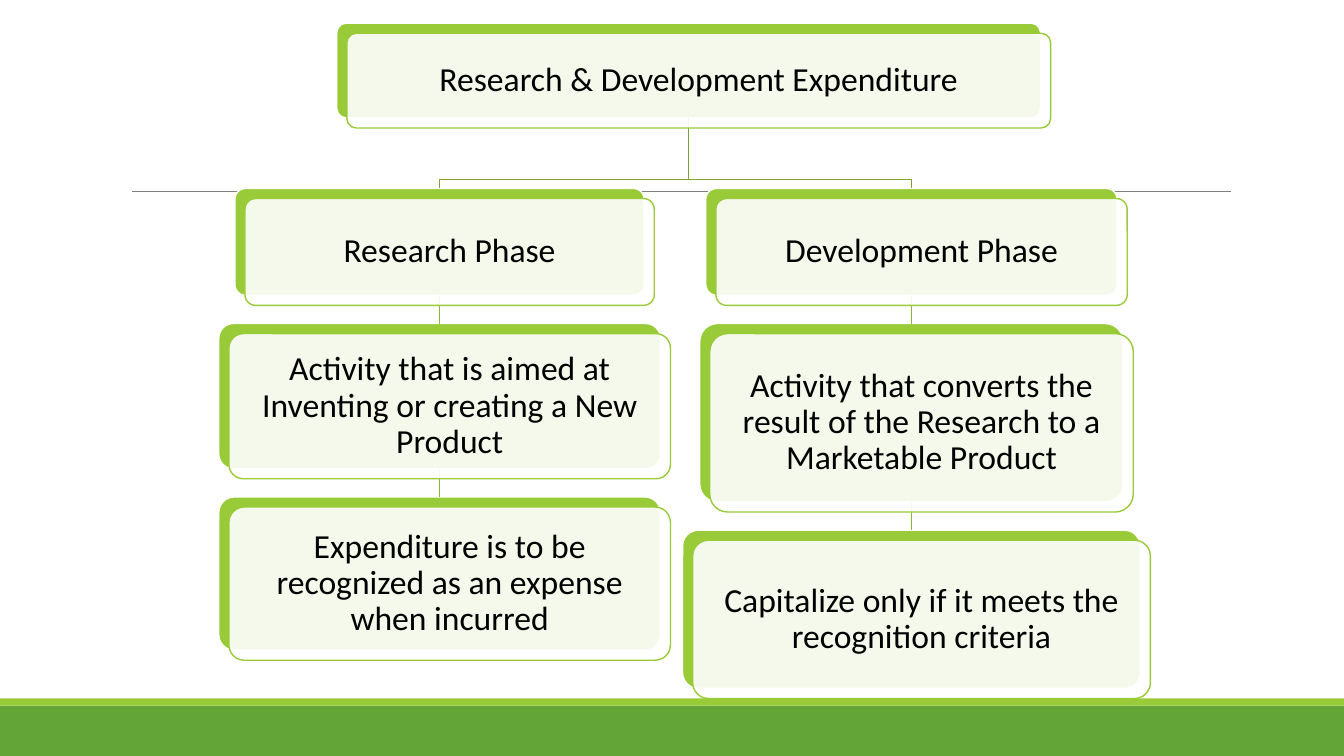
"""Build a slide charting how research and development expenditure is treated."""
import dataclasses
import typing

import lxml.etree
import pptx
import pptx.dml.color
import pptx.enum.shapes
import pptx.enum.text
import pptx.oxml.ns
import pptx.util

PX = 9144
SHAPE = pptx.enum.shapes.MSO_SHAPE
STRAIGHT = pptx.enum.shapes.MSO_CONNECTOR.STRAIGHT
PAGE_WIDTH, PAGE_HEIGHT = 1333, 750
PANEL_SHIFT = 10
PANEL_INSET = 3
BRANCH_Y = 178
TITLE_ONLY = 5


@dataclasses.dataclass(frozen=True)
class Theme:
    green: str = "63A537"
    lime: str = "99CB38"
    branch: str = "7BA32D"
    link: str = "8BB833"
    rule: str = "808080"
    paper: str = "FFFFFF"
    ink: str = "000000"
    font: str = "Calibri"
    size: int = 24
    line: float = 1
    thin: float = 0.5
    panel_alpha: int = 90


@dataclasses.dataclass(frozen=True)
class Card:
    text: str
    center: int
    top: int
    width: int
    height: int

    @property
    def left(self) -> int:
        return self.center - self.width // 2

    @property
    def bottom(self) -> int:
        return self.top + self.height


THEME = Theme()
ROOT = Card("Research & Development Expenditure", 683, 23, 698, 94)
BRANCHES = (
    (
        Card("Research Phase", 436, 187, 406, 106),
        Card("Activity that is aimed at Inventing or creating a New Product", 436, 321, 438, 144),
        Card("Expenditure is to be recognized as an expense when incurred", 436, 493, 438, 152),
    ),
    (
        Card("Development Phase", 904, 187, 408, 106),
        Card("Activity that converts the result of the Research to a Marketable Product",
             904, 321, 420, 177),
        Card("Capitalize only if it meets the recognition criteria", 904, 526, 454, 157),
    ),
)


def rgb(value: str) -> pptx.dml.color.RGBColor:
    return pptx.dml.color.RGBColor.from_string(value)


def apply(target: typing.Any, values: dict[str, typing.Any]) -> None:
    for name, value in values.items():
        setattr(target, name, value)


def set_line(item: typing.Any, color: str, width: float) -> None:
    item.line.color.rgb = rgb(color)
    item.line.width = pptx.util.Pt(width)


def add_block(page: typing.Any, kind: typing.Any, left: int, top: int, width: int,
              height: int, fill: str, line: str | None = None) -> typing.Any:
    block = page.shapes.add_shape(kind, left * PX, top * PX, width * PX, height * PX)
    block.shadow.inherit = False
    block.fill.solid()
    block.fill.fore_color.rgb = rgb(fill)
    if line:
        block.adjustments[0] = 0.1
        set_line(block, line, THEME.line)
    else:
        block.line.fill.background()
    return block


def add_line(page: typing.Any, start: tuple[int, int], end: tuple[int, int],
             color: str, width: float) -> typing.Any:
    points = [value * PX for value in (*start, *end)]
    connector = page.shapes.add_connector(STRAIGHT, *points)
    set_line(connector, color, width)
    lxml.etree.SubElement(connector._element.spPr, pptx.oxml.ns.qn("a:effectLst"))
    return connector


def add_elbow(page: typing.Any, parent: Card, child: Card) -> None:
    builder = page.shapes.build_freeform(parent.center, parent.bottom, scale=PX)
    builder.add_line_segments(
        [(parent.center, BRANCH_Y), (child.center, BRANCH_Y), (child.center, child.top)],
        close=False)
    elbow = builder.convert_to_shape()
    elbow.shadow.inherit = False
    elbow.fill.background()
    set_line(elbow, THEME.branch, THEME.line)


def write(box: typing.Any, text: str) -> None:
    frame = box.text_frame
    margin = 10 * PX
    apply(frame, {
        "auto_size": pptx.enum.text.MSO_AUTO_SIZE.NONE,
        "word_wrap": True,
        "vertical_anchor": pptx.enum.text.MSO_ANCHOR.MIDDLE,
        "margin_left": margin, "margin_right": margin,
        "margin_top": margin, "margin_bottom": margin,
    })
    para = frame.paragraphs[0]
    apply(para, {"alignment": pptx.enum.text.PP_ALIGN.CENTER, "line_spacing": 0.9})
    span = para.add_run()
    span.text = text
    apply(span.font, {"name": THEME.font, "size": pptx.util.Pt(THEME.size)})
    span.font.color.rgb = rgb(THEME.ink)


def add_back(page: typing.Any, card: Card) -> typing.Any:
    return add_block(page, SHAPE.ROUNDED_RECTANGLE, card.left, card.top, card.width,
                     card.height, THEME.lime, THEME.paper)


def add_panel(page: typing.Any, card: Card) -> typing.Any:
    panel = add_block(page, SHAPE.ROUNDED_RECTANGLE, card.left + PANEL_SHIFT,
                      card.top + PANEL_SHIFT, card.width, card.height,
                      THEME.paper, THEME.lime)
    color = panel._element.spPr.find(
        f"{pptx.oxml.ns.qn('a:solidFill')}/{pptx.oxml.ns.qn('a:srgbClr')}")
    alpha = lxml.etree.SubElement(color, pptx.oxml.ns.qn("a:alpha"))
    alpha.set("val", str(THEME.panel_alpha * 1000))
    return panel


def place_title(page: typing.Any, card: Card) -> None:
    title = page.shapes.title
    shift = PANEL_SHIFT + PANEL_INSET
    apply(title, {
        "left": (card.left + shift) * PX,
        "top": (card.top + shift) * PX,
        "width": (card.width - 2 * PANEL_INSET) * PX,
        "height": (card.height - 2 * PANEL_INSET) * PX,
    })
    write(title, card.text)
    page.shapes._spTree.append(title._element)


def main() -> None:
    deck = pptx.Presentation()
    apply(deck, {"slide_width": PAGE_WIDTH * PX, "slide_height": PAGE_HEIGHT * PX})
    page = deck.slides.add_slide(deck.slide_layouts[TITLE_ONLY])

    add_block(page, SHAPE.RECTANGLE, 0, 700, PAGE_WIDTH, 50, THEME.green)
    add_block(page, SHAPE.RECTANGLE, 0, 693, PAGE_WIDTH, 7, THEME.lime)
    add_line(page, (131, 190), (1221, 190), THEME.rule, THEME.thin)

    add_back(page, ROOT)
    for branch in BRANCHES:
        add_elbow(page, ROOT, branch[0])
        backs = [add_back(page, card) for card in branch]
        for index, (upper, lower) in enumerate(zip(branch, branch[1:])):
            link = add_line(page, (upper.center, upper.bottom), (lower.center, lower.top),
                            THEME.link, THEME.line)
            link.begin_connect(backs[index], 2)
            link.end_connect(backs[index + 1], 0)

    add_panel(page, ROOT)
    place_title(page, ROOT)
    for branch in BRANCHES:
        for card in branch:
            write(add_panel(page, card), card.text)

    deck.save("out.pptx")


if __name__ == "__main__":
    main()
